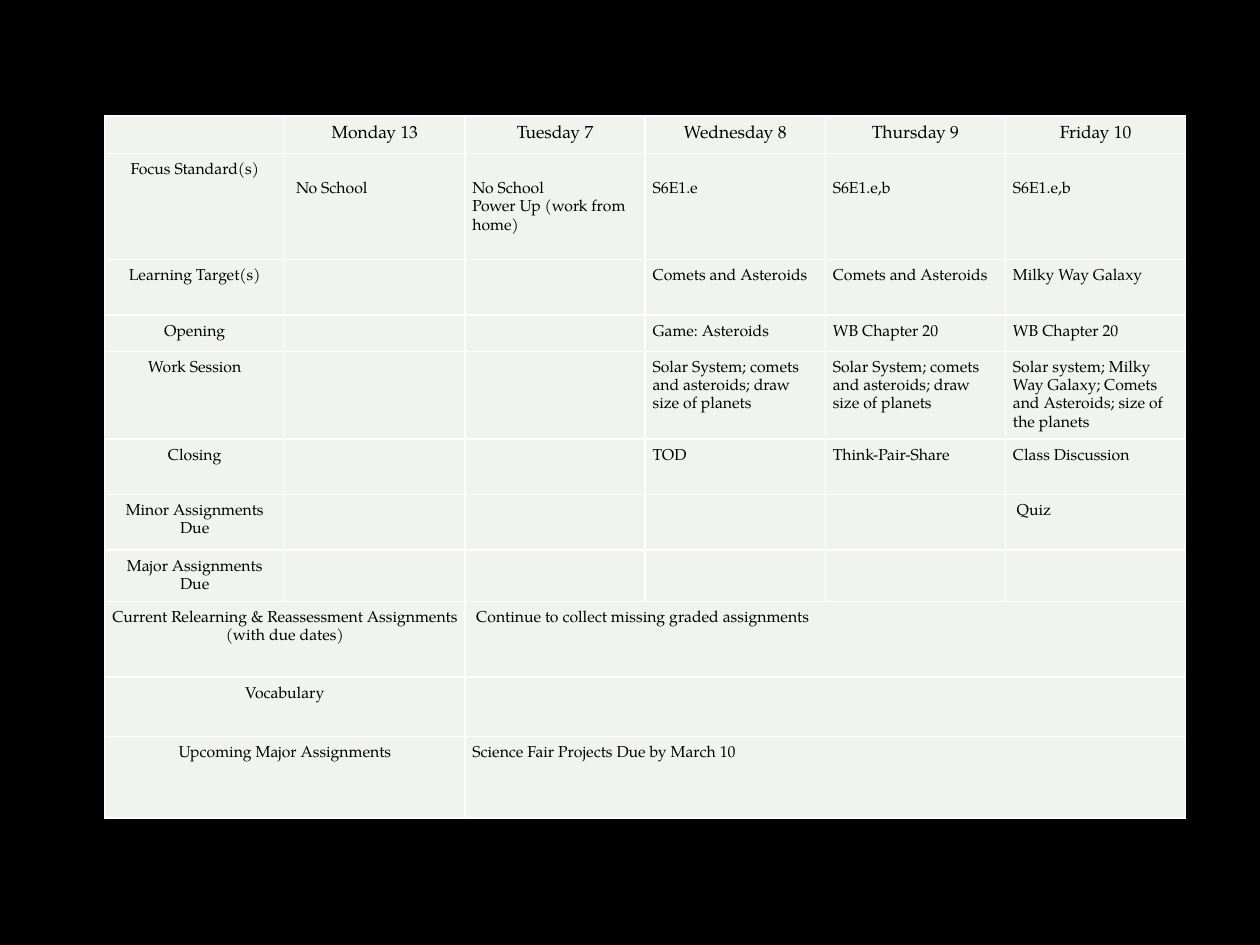
from lxml.etree import SubElement
from pptx import Presentation
from pptx.dml.color import RGBColor
from pptx.enum.text import PP_ALIGN
from pptx.oxml.ns import qn
from pptx.util import Inches, Pt

# Content: one entry per weekday, then the wide rows
DAYS = ["", "Monday 13", "Tuesday 7", "Wednesday 8", "Thursday 9", "Friday 10"]
PLANETS = "Solar System; comets and asteroids; draw size of planets"
DAILY = [
    ["Focus Standard(s)", "No School", "No School\nPower Up (work from home)",
     "S6E1.e", "S6E1.e,b", "S6E1.e,b"],
    ["Learning Target(s)", "", "", "Comets and Asteroids", "Comets and Asteroids",
     "Milky Way Galaxy"],
    ["Opening", "", "", "Game: Asteroids", "WB Chapter 20", "WB Chapter 20"],
    ["Work Session", "", "", PLANETS, PLANETS,
     "Solar system; Milky Way Galaxy; Comets and Asteroids; size of the planets"],
    ["Closing", "", "", "TOD", "Think-Pair-Share", "Class Discussion"],
    ["Minor Assignments Due", "", "", "", "", "Quiz"],
    ["Major Assignments Due", "", "", "", "", ""],
]
WIDE = [
    ("Current Relearning & Reassessment Assignments (with due dates)",
     "Continue to collect missing graded assignments"),
    ("Vocabulary", ""),
    ("Upcoming Major Assignments", "Science Fair Projects Due by March 10"),
]

# Format
FONT = "TeX Gyre Pagella"
BLACK, WHITE, PALE = "000000", "FFFFFF", "F0F3EE"
COLUMN_WIDTH = 1.43
ROW_HEIGHTS = [0.3, 0.84, 0.44, 0.29, 0.69, 0.44, 0.44, 0.41, 0.6, 0.47, 0.65]
MARGIN = 0.06
LOWERED_ROW, LOWERED_TOP = 1, 0.21
INDENTED, INDENTED_LEFT = {(1, 1), (6, 5), (8, 2)}, 0.09


def color(value):
    return RGBColor.from_string(value)


def set_all(target, values):
    for name, value in values.items():
        setattr(target, name, value)


def add_borders(cell):
    properties = cell._tc.get_or_add_tcPr()
    for position, side in enumerate(("lnL", "lnR", "lnT", "lnB")):
        line = properties.makeelement(qn(f"a:{side}"), {"w": str(Pt(1))})
        properties.insert(position, line)
        fill = SubElement(line, qn("a:solidFill"))
        SubElement(fill, qn("a:srgbClr"), val=WHITE)


def fill_cell(cell, text, size, centered, top=MARGIN, left=MARGIN):
    set_all(cell, {"margin_left": Inches(left), "margin_right": Inches(MARGIN),
                   "margin_top": Inches(top), "margin_bottom": Inches(MARGIN)})
    cell.text = text
    for para in cell.text_frame.paragraphs:
        set_all(para, {"line_spacing": 1.15,
                       "alignment": PP_ALIGN.CENTER if centered else PP_ALIGN.LEFT})
        for span in para.runs:
            set_all(span.font, {"name": FONT, "size": Pt(size)})
            span.font.color.rgb = color(BLACK)
        if not text:  # keeps empty cells from stretching their row
            para._p.get_or_add_endParaRPr().set("sz", str(size * 100))


deck = Presentation()
set_all(deck, {"slide_width": Inches(10), "slide_height": Inches(7.5)})
page = deck.slides.add_slide(deck.slide_layouts[6])
page.background.fill.solid()
page.background.fill.fore_color.rgb = color(BLACK)

# Table grid
rows = [DAYS] + DAILY + [[label, "", text, "", "", ""] for label, text in WIDE]
box = page.shapes.add_table(len(rows), len(DAYS), Inches(0.83), Inches(0.92),
                            Inches(COLUMN_WIDTH * len(DAYS)), Inches(sum(ROW_HEIGHTS)))
table = box.table
set_all(table, {"first_row": False, "horz_banding": False})
for column in table.columns:
    column.width = Inches(COLUMN_WIDTH)
for row, height in zip(table.rows, ROW_HEIGHTS):
    row.height = Inches(height)

# Cells
for r, texts in enumerate(rows):
    for c, text in enumerate(texts):
        cell = table.cell(r, c)
        fill_cell(cell, text, size=10 if r == 0 else 9, centered=r == 0 or c == 0,
                  top=LOWERED_TOP if r == LOWERED_ROW and c else MARGIN,
                  left=INDENTED_LEFT if (r, c) in INDENTED else MARGIN)
        cell.fill.solid()
        cell.fill.fore_color.rgb = color(PALE)
        add_borders(cell)

# Wide rows: label over two columns, text over four
for r in range(len(rows) - len(WIDE), len(rows)):
    table.cell(r, 0).merge(table.cell(r, 1))
    table.cell(r, 2).merge(table.cell(r, 5))

deck.save("out.pptx")
